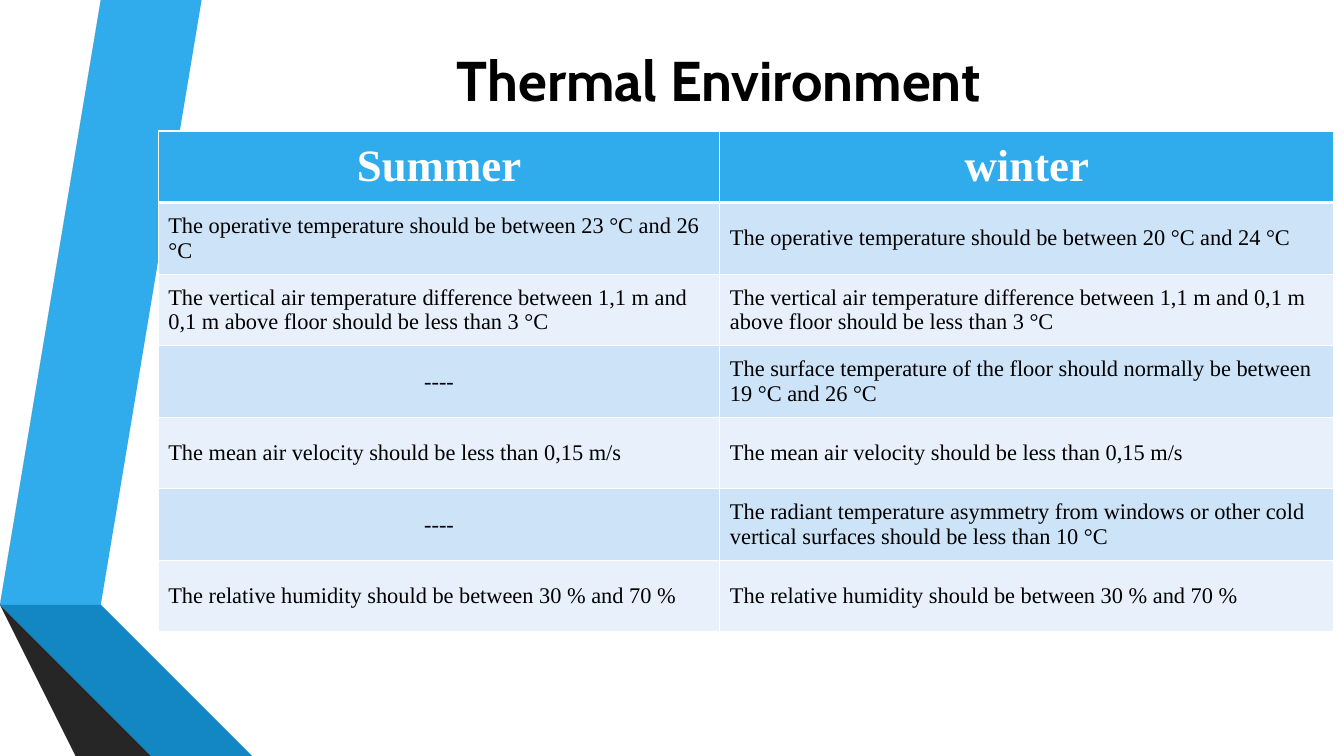
import dataclasses

import lxml.etree
import pptx
import pptx.dml.color
import pptx.enum.text
import pptx.oxml.ns
import pptx.util

Inches, Pt = pptx.util.Inches, pptx.util.Pt
ANCHOR = pptx.enum.text.MSO_ANCHOR
ALIGN = pptx.enum.text.PP_ALIGN
rgb = pptx.dml.color.RGBColor.from_string


@dataclasses.dataclass(frozen=True)
class Theme:
    title_font: str = "Cabin"
    table_font: str = "Times New Roman"
    title_size: int = 40
    header_size: int = 32
    body_size: int = 16
    text: str = "000000"
    white: str = "FFFFFF"
    blue: str = "30ACEC"
    blue_dark: str = "1287C3"
    blue_edge: str = "0C5A82"
    grey: str = "595959"
    grey_dark: str = "404040"
    grey_edge: str = "262626"
    bands: tuple = ("CDE3F8", "E8F1FB")


theme = Theme()


def write(frame, text, font, size, color, bold, align):
    paragraph = frame.paragraphs[0]
    paragraph.alignment = align
    run = paragraph.add_run()
    run.text = text
    run.font.name = font
    run.font.size = Pt(size)
    run.font.bold = bold
    run.font.color.rgb = rgb(color)


def set_border(cell, side, width):
    """Draw one solid white edge; side is L, R, T or B."""
    qn = pptx.oxml.ns.qn
    edge = lxml.etree.Element(qn(f"a:ln{side}"), w=str(Pt(width)))
    fill = lxml.etree.SubElement(edge, qn("a:solidFill"))
    lxml.etree.SubElement(fill, qn("a:srgbClr"), val=theme.white)
    cell_properties = cell._tc.get_or_add_tcPr()
    # Edges come before the fill, in the order they are set
    cell_properties.insert(len(cell_properties) - 1, edge)


deck = pptx.Presentation()
deck.slide_width, deck.slide_height = Inches(13.33), Inches(7.5)
slide = deck.slides.add_slide(deck.slide_layouts[5])

# Folded ribbons along the left edge
ribbons = [
    (theme.blue, [(0.5, 5.78), (0.77, 5.83), (1.73, 0), (1.45, 0)]),
    (theme.grey, [(1.39, 0), (1.11, 0), (0.16, 5.73), (0.44, 5.77)]),
    (theme.grey_edge, [(0.16, 5.73), (1.45, 7.5), (1.51, 7.5)]),
    (theme.blue_edge, [(0.5, 5.79), (2.08, 7.5), (2.14, 7.5)]),
    (theme.blue_dark, [(0.5, 5.78), (0.5, 5.79), (2.14, 7.5), (2.83, 7.5), (0.77, 5.83)]),
    (theme.grey_dark, [(2.02, 7.5), (0.48, 5.83), (0.44, 5.77), (0.16, 5.73), (1.51, 7.5)]),
]
for color, corners in ribbons:
    outline = slide.shapes.build_freeform(*corners[0], scale=Inches(1))
    outline.add_line_segments(corners[1:], close=True)
    ribbon = outline.convert_to_shape()
    ribbon.shadow.inherit = False
    ribbon.fill.solid()
    ribbon.fill.fore_color.rgb = rgb(color)
    ribbon.line.fill.background()

heading = slide.shapes.title
heading.left, heading.top = Inches(1.65), Inches(0.12)
heading.width, heading.height = Inches(10.96), Inches(1.92)
heading.text_frame.vertical_anchor = ANCHOR.MIDDLE
heading.text_frame.margin_bottom = Inches(0.65)
write(heading.text_frame, "Thermal Environment", theme.title_font,
      theme.title_size, theme.text, True, ALIGN.CENTER)

NONE = "----"
air_difference = ("The vertical air temperature difference between 1,1 m and 0,1 m "
                  "above floor should be less than 3 °C")
velocity = "The mean air velocity should be less than 0,15 m/s"
humidity = "The relative humidity should be between 30 % and 70 %"
criteria = [
    ("Summer", "winter"),
    ("The operative temperature should be between 23 °C and 26 °C",
     "The operative temperature should be between 20 °C and 24 °C"),
    (air_difference, air_difference),
    (NONE, "The surface temperature of the floor should normally be between "
           "19 °C and 26 °C"),
    (velocity, velocity),
    (NONE, "The radiant temperature asymmetry from windows or other cold "
           "vertical surfaces should be less than 10 °C"),
    (humidity, humidity),
]
season_widths = (5.57, 6.09)
row_height = 0.71
seasons = slide.shapes.add_table(
    len(criteria), len(season_widths), Inches(1.57), Inches(1.3),
    Inches(sum(season_widths)), Inches(row_height * len(criteria))).table
for column, width in zip(seasons.columns, season_widths):
    column.width = Inches(width)

for row, texts in enumerate(criteria):
    seasons.rows[row].height = Inches(row_height)
    header = row == 0
    for column, text in enumerate(texts):
        cell = seasons.cell(row, column)
        cell.vertical_anchor = ANCHOR.MIDDLE
        cell.fill.solid()
        cell.fill.fore_color.rgb = rgb(theme.blue if header else theme.bands[(row - 1) % 2])
        write(cell.text_frame, text, theme.table_font,
              theme.header_size if header else theme.body_size,
              theme.white if header else theme.text, header,
              ALIGN.CENTER if header or text == NONE else ALIGN.LEFT)
        for side in "LRTB":
            thick = (row, side) in ((0, "B"), (1, "T"))
            set_border(cell, side, 3 if thick else 1)

deck.save("out.pptx")
